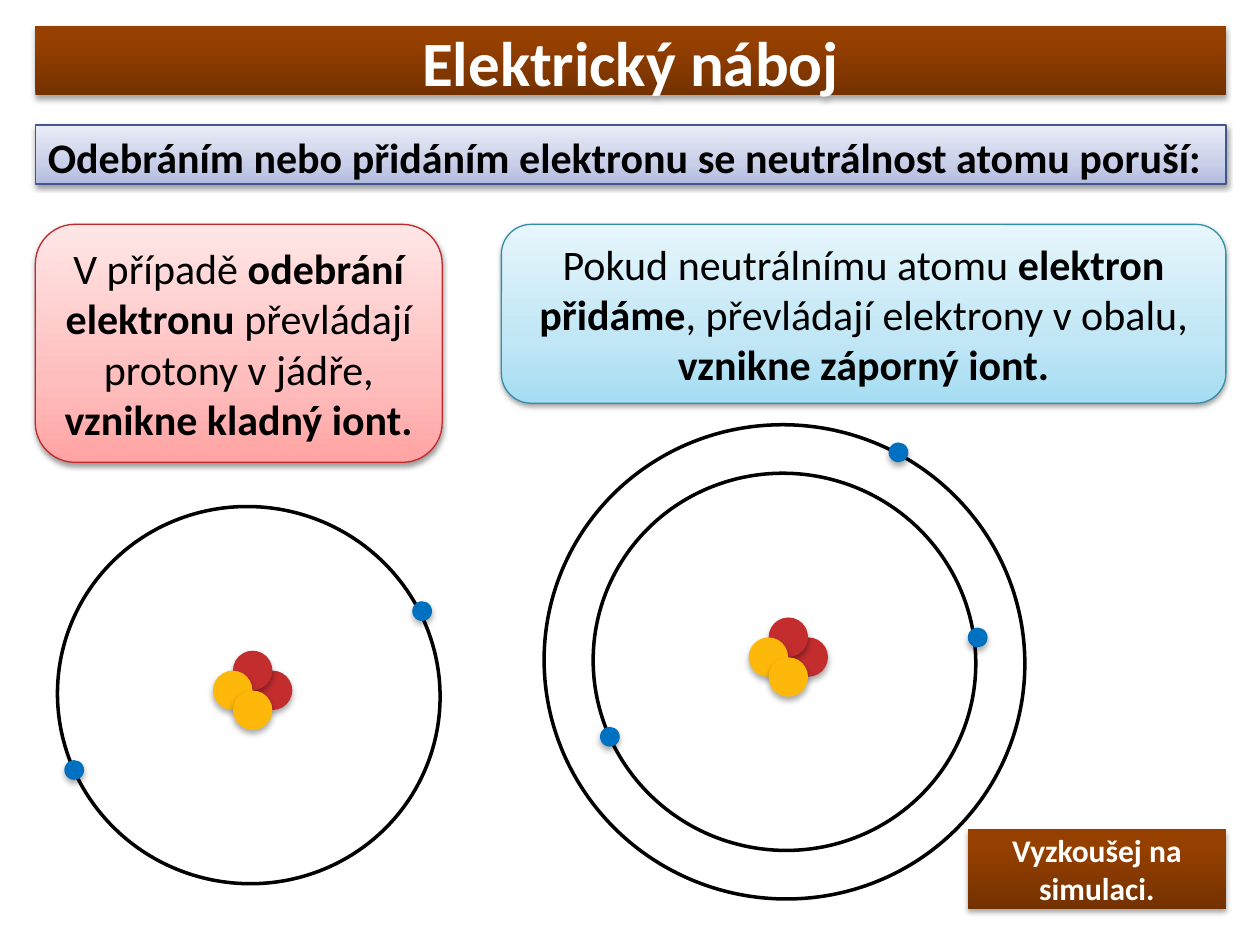
from dataclasses import dataclass

from lxml import etree
from pptx import Presentation
from pptx.dml.color import RGBColor
from pptx.enum.shapes import MSO_SHAPE
from pptx.enum.text import MSO_ANCHOR, MSO_AUTO_SIZE, PP_ALIGN
from pptx.oxml.ns import qn
from pptx.util import Pt

RECT, ROUNDED = MSO_SHAPE.RECTANGLE, MSO_SHAPE.ROUNDED_RECTANGLE
OVAL, BUTTON = MSO_SHAPE.OVAL, MSO_SHAPE.ACTION_BUTTON_CUSTOM
LEFT, CENTER = PP_ALIGN.LEFT, PP_ALIGN.CENTER
TOP, MIDDLE = MSO_ANCHOR.TOP, MSO_ANCHOR.MIDDLE
NO_AUTOFIT = MSO_AUTO_SIZE.NONE
TITLE_ONLY = 5


@dataclass(frozen=True)
class Theme:
    font: str = "Calibri"
    title_size: int = 36
    body_size: int = 24
    button_size: int = 18
    black: str = "000000"
    white: str = "FFFFFF"
    proton: str = "C32D2E"
    neutron: str = "FEB80A"
    electron: str = "0070C0"
    # Gradient stops run from the bottom edge to the top edge.
    brown: tuple = ((0, "743100"), (80, "964000"), (100, "974100"))
    violet: tuple = ((0, "B2BBE0"), (35, "C9CFE8"), (100, "EAECF7"))
    red: tuple = ((0, "FFA3A3"), (35, "FFBEBE"), (100, "FFE6E6"))
    blue: tuple = ((0, "A5DDF3"), (35, "C1E6F5"), (100, "E6F6FC"))
    violet_edge: str = "44578C"
    red_edge: str = "C22829"
    blue_edge: str = "348FA6"
    # Shadows: opacity in percent, blur and distance in points.
    button_shadow: tuple = (35, 3.1, 1.8)
    panel_shadow: tuple = (38, 3.1, 1.6)
    particle_shadow: tuple = (32, 3.5, 2.2)


THEME = Theme()
MARGIN, CONTENT_WIDTH = 20.2, 680.4
PANEL_TOP = 128.2
NUCLEON_SIZE, NUCLEON_OFFSET = 22.5, 11.4
ELECTRON_SIZE = 11.3
ORBIT_SHIFT = (-2.2, 2.7)
ORBIT_TURN = 285.3
INNER_ORBIT, OUTER_ORBIT = (215.3, 218.9), (270.7, 275)


def apply_format(target, values):
    for name, value in values.items():
        setattr(target, name, value)


def place(shape, left, top, width, height):
    apply_format(shape, {"left": Pt(left), "top": Pt(top),
                         "width": Pt(width), "height": Pt(height)})


def add_shadow(shape, opacity, blur, distance):
    """Cast a black shadow straight down."""
    shape.shadow.inherit = False
    effects = shape._element.spPr.find(qn("a:effectLst"))
    shadow = etree.SubElement(effects, qn("a:outerShdw"), {
        "blurRad": str(Pt(blur)), "dist": str(Pt(distance)),
        "dir": "5400000", "rotWithShape": "0"})
    color = etree.SubElement(shadow, qn("a:srgbClr"), val=THEME.black)
    etree.SubElement(color, qn("a:alpha"), val=str(opacity * 1000))


def fill_gradient(shape, stops):
    shape.fill.gradient()
    shape.fill.gradient_angle = 90
    stop_list = shape._element.spPr.find(qn("a:gradFill")).find(qn("a:gsLst"))
    for stop in list(stop_list):
        stop_list.remove(stop)
    for position, color in stops:
        stop = etree.SubElement(stop_list, qn("a:gs"), pos=str(position * 1000))
        etree.SubElement(stop, qn("a:srgbClr"), val=color)


def set_line(shape, color, width=0.75):
    if color is None:
        shape.line.fill.background()
    else:
        shape.line.color.rgb = RGBColor.from_string(color)
        shape.line.width = Pt(width)


def write_text(box, spans, size, color, align=CENTER, anchor=MIDDLE):
    """Write one paragraph from (text, bold) spans."""
    frame = box.text_frame
    apply_format(frame, {"word_wrap": True, "auto_size": NO_AUTOFIT,
                         "vertical_anchor": anchor})
    para = frame.paragraphs[0]
    para.alignment = align
    for text, bold in spans:
        span = para.add_run()
        span.text = text
        apply_format(span.font, {"name": THEME.font, "size": Pt(size), "bold": bold})
        span.font.color.rgb = RGBColor.from_string(color)


def style_box(box, stops, edge, shadow):
    fill_gradient(box, stops)
    set_line(box, edge)
    add_shadow(box, *shadow)


def add_title(page, text):
    title = page.shapes.title
    place(title, MARGIN, 15, CONTENT_WIDTH, 39.6)
    style_box(title, THEME.brown, None, THEME.button_shadow)
    write_text(title, [(text, True)], THEME.title_size, THEME.white)


def add_panel(page, kind, bounds, stops, edge, spans, **layout):
    panel = page.shapes.add_shape(kind, *map(Pt, bounds))
    style_box(panel, stops, edge, THEME.panel_shadow)
    write_text(panel, spans, THEME.body_size, THEME.black, **layout)


def add_button(page, bounds, text):
    button = page.shapes.add_shape(BUTTON, *map(Pt, bounds))
    style_box(button, THEME.brown, None, THEME.button_shadow)
    write_text(button, [(text, True)], THEME.button_size, THEME.white)


def add_oval(page, x, y, width, height):
    """Add an oval centred on x, y."""
    return page.shapes.add_shape(OVAL, Pt(x - width / 2), Pt(y - height / 2),
                                 Pt(width), Pt(height))


def add_particle(page, x, y, size, color):
    particle = add_oval(page, x, y, size, size)
    particle.fill.solid()
    particle.fill.fore_color.rgb = RGBColor.from_string(color)
    set_line(particle, None)
    add_shadow(particle, *THEME.particle_shadow)


def add_orbit(page, x, y, size):
    orbit = add_oval(page, x, y, *size)
    orbit.rotation = ORBIT_TURN
    orbit.fill.background()
    orbit.shadow.inherit = False
    set_line(orbit, THEME.black, 2)


def add_atom(page, x, y, orbits, electrons):
    """Draw an atom around x, y; electrons are offsets from its nucleus."""
    nucleons = ((1, 0, THEME.proton), (0, -1, THEME.proton),
                (-1, 0, THEME.neutron), (0, 1, THEME.neutron))
    for across, down, color in nucleons:
        add_particle(page, x + across * NUCLEON_OFFSET, y + down * NUCLEON_OFFSET,
                     NUCLEON_SIZE, color)
    for size in orbits:
        add_orbit(page, x + ORBIT_SHIFT[0], y + ORBIT_SHIFT[1], size)
    for across, down in electrons:
        add_particle(page, x + across, y + down, ELECTRON_SIZE, THEME.electron)


def main():
    deck = Presentation()
    deck.slide_width, deck.slide_height = Pt(720), Pt(540)
    page = deck.slides.add_slide(deck.slide_layouts[TITLE_ONLY])

    add_title(page, "Elektrický náboj")
    add_panel(page, RECT, (MARGIN, 71.5, CONTENT_WIDTH, 33.8),
              THEME.violet, THEME.violet_edge,
              [("Odebráním nebo přidáním elektronu se neutrálnost atomu poruší:", True)],
              align=LEFT, anchor=TOP)
    add_panel(page, ROUNDED, (MARGIN, PANEL_TOP, 232.5, 136),
              THEME.red, THEME.red_edge,
              [("V případě ", False), ("odebrání elektronu", True),
               (" převládají protony v jádře, ", False),
               ("vznikne kladný iont.", True)])
    add_panel(page, ROUNDED, (286.5, PANEL_TOP, 414, 102.2),
              THEME.blue, THEME.blue_edge,
              [("Pokud neutrálnímu atomu ", False), ("elektron přidáme", True),
               (", převládají elektrony v obalu, ", False),
               ("vznikne záporný iont.", True)])
    add_button(page, (553, 474, 147.6, 45.4), "Vyzkoušej na simulaci.")

    add_atom(page, 144.4, 394.5, [INNER_ORBIT], [(-102, 45.5), (96.8, -45.3)])
    add_atom(page, 450.5, 375.5, [INNER_ORBIT, OUTER_ORBIT],
             [(-102, 45.5), (108.2, -11.2), (62.9, -117)])

    deck.save("out.pptx")


if __name__ == "__main__":
    main()
